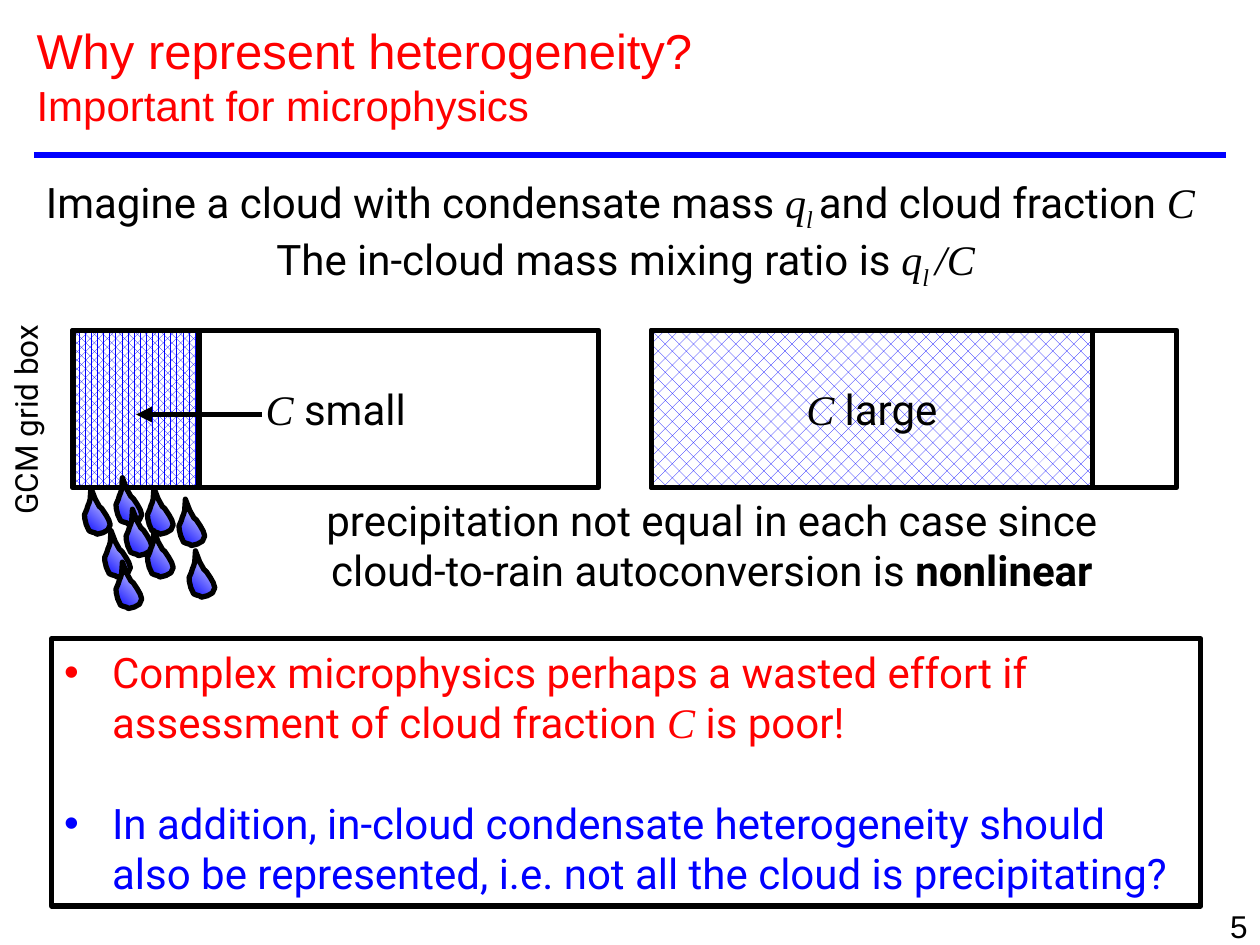
from lxml.etree import SubElement
from pptx import Presentation
from pptx.dml.color import RGBColor
from pptx.enum.dml import MSO_PATTERN
from pptx.enum.shapes import MSO_CONNECTOR, MSO_SHAPE
from pptx.enum.text import MSO_ANCHOR, MSO_AUTO_SIZE, PP_ALIGN
from pptx.oxml.ns import qn
from pptx.util import Inches, Pt

BLACK, WHITE, RED, BLUE = "000000", "FFFFFF", "FF0000", "0000FF"

# Raindrop outline in hundredths of an inch, from its top left corner
DROP_OUTLINE = [
    (6, 0), (5, 9), (4, 12), (3, 14), (2, 17), (0, 21), (0, 24), (1, 29),
    (3, 34), (5, 35), (8, 36), (9, 37), (14, 36.5), (18, 34), (19, 32),
    (20, 30), (19, 26), (17, 22), (14, 17), (12, 15), (11, 13), (9, 9),
]
DROP_POSITIONS = [
    (0.67, 3.87), (0.92, 3.79), (1, 4.04), (1.17, 3.87), (1.42, 3.96),
    (0.83, 4.21), (1.17, 4.21), (0.92, 4.46), (1.5, 4.37),
]


def color(value):
    return RGBColor.from_string(value)


class SlideBuilder:
    """Holds the style and the current slide."""

    text_font, math_font, title_font = "Roboto", "Times New Roman", "Arial"
    text_size, line_width = 24, 3

    def __init__(self, slide):
        self.slide = slide

    def outline(self, line, value=BLACK):
        line.color.rgb = color(value)
        line.width = Pt(self.line_width)

    def add_paragraphs(self, shape, paragraphs, align=PP_ALIGN.CENTER, wrap=True,
                       value=BLACK, font=None, size=None):
        """Each paragraph is a list of (text, style) runs."""
        frame = shape.text_frame
        frame.word_wrap = wrap
        frame.auto_size = MSO_AUTO_SIZE.NONE
        frame.vertical_anchor = MSO_ANCHOR.MIDDLE
        for index, runs in enumerate(paragraphs):
            paragraph = frame.paragraphs[0] if index == 0 else frame.add_paragraph()
            paragraph.alignment = align
            paragraph.space_before = Pt(0)
            for text, style in runs:
                run = paragraph.add_run()
                run.text = text
                is_math = style in ("math", "subscript")
                run.font.name = self.math_font if is_math else font or self.text_font
                run.font.size = Pt(size or self.text_size)
                run.font.color.rgb = color(value)
                run.font.italic = is_math
                run.font.bold = style == "bold"
                if style == "subscript":
                    run._r.get_or_add_rPr().set("baseline", "-25000")

    def place(self, shape, box):
        shape.left, shape.top, shape.width, shape.height = map(Inches, box)

    def title(self, box, heading, subheading):
        shape = self.slide.shapes.title
        self.place(shape, box)
        self.add_paragraphs(shape, [[(heading, "")], [(subheading, "")]],
                            PP_ALIGN.LEFT, value=RED, font=self.title_font)
        shape.text_frame.paragraphs[0].runs[0].font.size = Pt(28)

    def bullets(self, box, items, colors, gap):
        shape = self.slide.placeholders[1]
        self.place(shape, box)
        self.outline(shape.line)
        self.add_paragraphs(shape, items, PP_ALIGN.LEFT)
        for index, paragraph in enumerate(shape.text_frame.paragraphs):
            properties = paragraph._p.get_or_add_pPr()
            properties.set("marL", str(Inches(0.38)))
            properties.set("indent", str(Inches(-0.38)))
            if index:
                paragraph.space_before = Pt(gap)
            SubElement(properties, qn("a:buFont")).set("typeface", "Arial")
            SubElement(properties, qn("a:buChar")).set("char", "•")
            for run in paragraph.runs:
                run.font.color.rgb = color(colors[index])

    def text(self, box, paragraphs, rotation=0, **style):
        shape = self.slide.shapes.add_textbox(*map(Inches, box))
        shape.rotation = rotation
        self.add_paragraphs(shape, paragraphs, **style)

    def rectangle(self, box, pattern=None, label=None):
        shape = self.slide.shapes.add_shape(MSO_SHAPE.RECTANGLE, *map(Inches, box))
        shape.shadow.inherit = False
        self.outline(shape.line)
        if pattern:
            shape.fill.patterned()
            shape.fill.pattern = pattern
            shape.fill.fore_color.rgb = color(BLUE)
            shape.fill.back_color.rgb = color(WHITE)
        else:
            shape.fill.solid()
            shape.fill.fore_color.rgb = color(WHITE)
        if label:
            self.add_paragraphs(shape, [label], wrap=False)

    def line(self, start, end, value=BLACK, arrow=False):
        connector = self.slide.shapes.add_connector(
            MSO_CONNECTOR.STRAIGHT, *map(Inches, start + end))
        self.outline(connector.line, value)
        if arrow:
            SubElement(connector.line._get_or_add_ln(), qn("a:tailEnd")).set("type", "triangle")
        SubElement(connector._element.spPr, qn("a:effectLst"))

    def raindrop(self, left, top):
        builder = self.slide.shapes.build_freeform(*DROP_OUTLINE[0], scale=Inches(0.01))
        builder.add_line_segments(DROP_OUTLINE[1:], close=True)
        shape = builder.convert_to_shape(Inches(left), Inches(top))
        shape.shadow.inherit = False
        shape.rotation = 357.4
        shape.fill.gradient()
        shape.fill.gradient_angle = 45
        for stop, position, value in zip(shape.fill.gradient_stops, (0, 1), (BLUE, WHITE)):
            stop.position = position
            stop.color.rgb = color(value)
        self.outline(shape.line)


def main():
    presentation = Presentation()
    presentation.slide_width, presentation.slide_height = Inches(10), Inches(7.5)
    builder = SlideBuilder(presentation.slides.add_slide(presentation.slide_layouts[1]))

    # Heading, rule and slide number
    builder.title((0.19, 0.28, 8.56, 0.64),
                  "Why represent heterogeneity?", "Important for microphysics")
    builder.line((0.27, 1.23), (9.73, 1.23), BLUE)
    builder.text((7.92, 7.1, 2.08, 0.5), [[("5", "")]],
                 align=PP_ALIGN.RIGHT, font=builder.title_font, size=18)

    # Introduction
    builder.text((0.19, 1.4, 9.55, 0.91), [
        [("Imagine a cloud with condensate mass ", ""), ("q", "math"), ("l ", "subscript"),
         ("and cloud fraction ", ""), ("C ", "math")],
        [("The in-cloud mass mixing ratio is ", ""), ("q", "math"), ("l ", "subscript"),
         ("/C", "math")],
    ])

    # Grid boxes with a large and a small cloud fraction
    top, height = 2.62, 1.25
    builder.rectangle((5.17, top, 4.17, height))
    builder.rectangle((5.17, top, 3.5, height), MSO_PATTERN.PERCENT_25,
                      [("C ", "math"), ("large", "")])
    builder.rectangle((0.58, top, 4.17, height), label=[("C ", "math"), ("small", "")])
    builder.rectangle((0.58, top, 1, height), MSO_PATTERN.PERCENT_70)
    builder.text((-0.67, 3.13, 1.74, 0.4), [[("GCM grid box", "")]],
                 rotation=270, wrap=False, size=18)
    builder.line((2.08, 3.29), (1.08, 3.29), arrow=True)

    # Precipitation
    for left, drop_top in DROP_POSITIONS:
        builder.raindrop(left, drop_top)
    builder.text((2.47, 3.87, 6.36, 0.91), [
        [("precipitation not equal in each case since", "")],
        [("cloud-to-rain autoconversion is ", ""), ("nonlinear", "bold")],
    ], wrap=False)

    # Conclusions
    builder.bullets((0.41, 5.07, 9.12, 2.12), [
        [("Complex microphysics perhaps a wasted effort if assessment of cloud fraction ", ""),
         ("C ", "math"), ("is poor!", "")],
        [("In addition, in-cloud condensate heterogeneity should also be represented, "
          "i.e. not all the cloud is precipitating?", "")],
    ], (RED, BLUE), gap=28.8)

    presentation.save("out.pptx")


if __name__ == "__main__":
    main()
